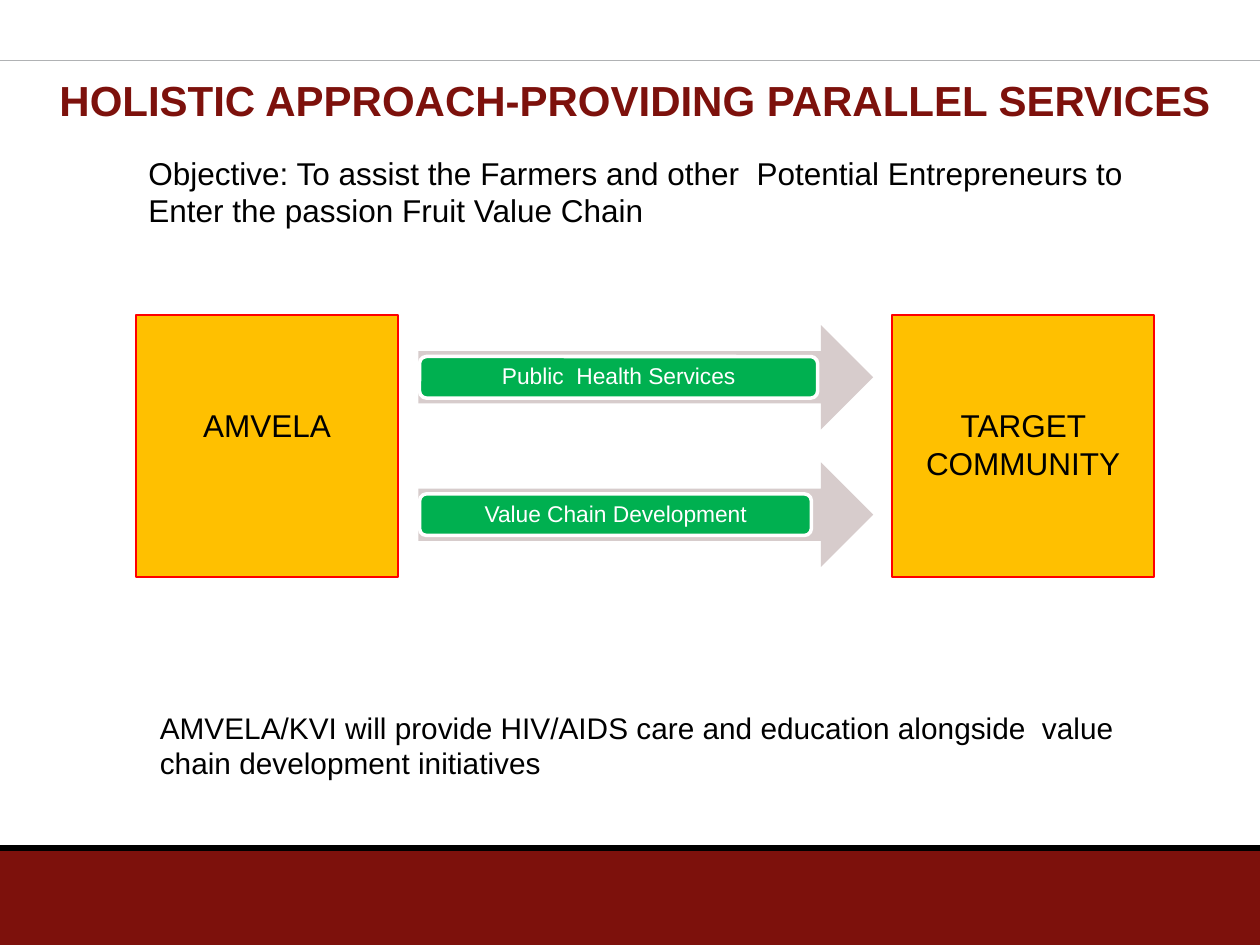
from dataclasses import dataclass

from lxml import etree
from pptx import Presentation
from pptx.dml.color import RGBColor
from pptx.enum import shapes, text
from pptx.oxml import ns
from pptx.util import Inches, Pt

MAROON = RGBColor(0x7D, 0x11, 0x0C)
SILVER = RGBColor(0xB0, 0xB2, 0xB4)
BLACK = RGBColor(0x00, 0x00, 0x00)
WHITE = RGBColor(0xFF, 0xFF, 0xFF)
AMBER = RGBColor(0xFF, 0xC0, 0x00)
RED = RGBColor(0xFF, 0x00, 0x00)
GREEN = RGBColor(0x00, 0xB0, 0x50)
DUSTY = RGBColor(0xD7, 0xCC, 0xCC)

SHAPE = shapes.MSO_SHAPE
ANCHOR = text.MSO_ANCHOR
ALIGN = text.PP_ALIGN


@dataclass
class Service:
    label: str
    top: float
    label_width: float


@dataclass
class Party:
    label: str
    left: float


SERVICES = [
    Service("Value Chain Development", 3.67, 3.11),
    Service("Public  Health Services", 2.58, 3.16),
]
PARTIES = [Party("TARGET COMMUNITY", 7.08), Party("AMVELA", 1.08)]


def write(shape, content: str, *, size: float, color=BLACK, bold=False,
          align=ALIGN.LEFT, anchor=ANCHOR.TOP, line_spacing=None,
          side_inset=0.1, top_inset=0.05) -> None:
    frame = shape.text_frame
    frame.word_wrap = True
    frame.vertical_anchor = anchor
    frame.margin_left = frame.margin_right = Inches(side_inset)
    frame.margin_top = Inches(top_inset)
    frame.margin_bottom = Inches(0.05)
    para = frame.paragraphs[0]
    para.alignment = align
    if line_spacing:
        para.line_spacing = line_spacing
    span = para.add_run()
    span.text = content
    span.font.name = "Arial"
    span.font.size = Pt(size)
    span.font.bold = bold
    span.font.color.rgb = color


def add_box(page, kind, left: float, top: float, width: float, height: float,
            fill: RGBColor, line: RGBColor | None = None, weight: float = 0.75):
    box = page.shapes.add_shape(kind, Inches(left), Inches(top), Inches(width), Inches(height))
    box.shadow.inherit = False
    box.fill.solid()
    box.fill.fore_color.rgb = fill
    if line is None:
        box.line.fill.background()
    else:
        box.line.color.rgb = line
        box.line.width = Pt(weight)
    return box


def add_rule(page, top: float, color: RGBColor, weight: float) -> None:
    rule = page.shapes.add_connector(
        shapes.MSO_CONNECTOR.STRAIGHT, Inches(0), Inches(top), Inches(10), Inches(top))
    rule.line.color.rgb = color
    rule.line.width = Pt(weight)
    etree.SubElement(rule._element.spPr, ns.qn("a:effectLst"))


def add_text(page, content: str, left: float, top: float, width: float,
             height: float, **style) -> None:
    box = page.shapes.add_textbox(Inches(left), Inches(top), Inches(width), Inches(height))
    write(box, content, **style)


def add_service(page, service: Service) -> None:
    add_box(page, SHAPE.RIGHT_ARROW, 3.32, service.top, 3.61, 0.83, DUSTY)
    label = add_box(page, SHAPE.ROUNDED_RECTANGLE, 3.33, service.top + 0.25,
                    service.label_width, 0.33, GREEN, WHITE, 2)
    write(label, service.label, size=13, color=WHITE, align=ALIGN.CENTER,
          anchor=ANCHOR.MIDDLE, line_spacing=0.9, side_inset=0.05)


def add_party(page, party: Party) -> None:
    box = add_box(page, SHAPE.RECTANGLE, party.left, 2.5, 2.08, 2.08, AMBER, RED)
    write(box, party.label, size=18, align=ALIGN.CENTER, top_inset=0.72)


def main() -> None:
    deck = Presentation()
    deck.slide_width, deck.slide_height = Inches(10), Inches(7.5)
    page = deck.slides.add_slide(deck.slide_layouts[6])

    add_box(page, SHAPE.RECTANGLE, 0, 6.75, 10, 0.75, MAROON)
    add_rule(page, 0.48, SILVER, 0.75)
    add_rule(page, 6.73, BLACK, 3.75)
    add_text(page, "HOLISTIC APPROACH-PROVIDING PARALLEL SERVICES", 0.33, 0.5, 9.42, 0.58,
             size=24, color=MAROON, bold=True, align=ALIGN.CENTER, anchor=ANCHOR.MIDDLE)
    add_text(page, "Objective: To assist the Farmers and other  Potential Entrepreneurs "
             "to Enter the passion Fruit Value Chain", 1.08, 1.17, 8.42, 0.92, size=18)
    for party in PARTIES:
        add_party(page, party)
    for service in SERVICES:
        add_service(page, service)
    add_text(page, "AMVELA/KVI will provide HIV/AIDS care and education alongside  value "
             "chain development initiatives", 1.17, 5.5, 8.08, 0.83,
             size=17, anchor=ANCHOR.MIDDLE)
    deck.save("out.pptx")


if __name__ == "__main__":
    main()
